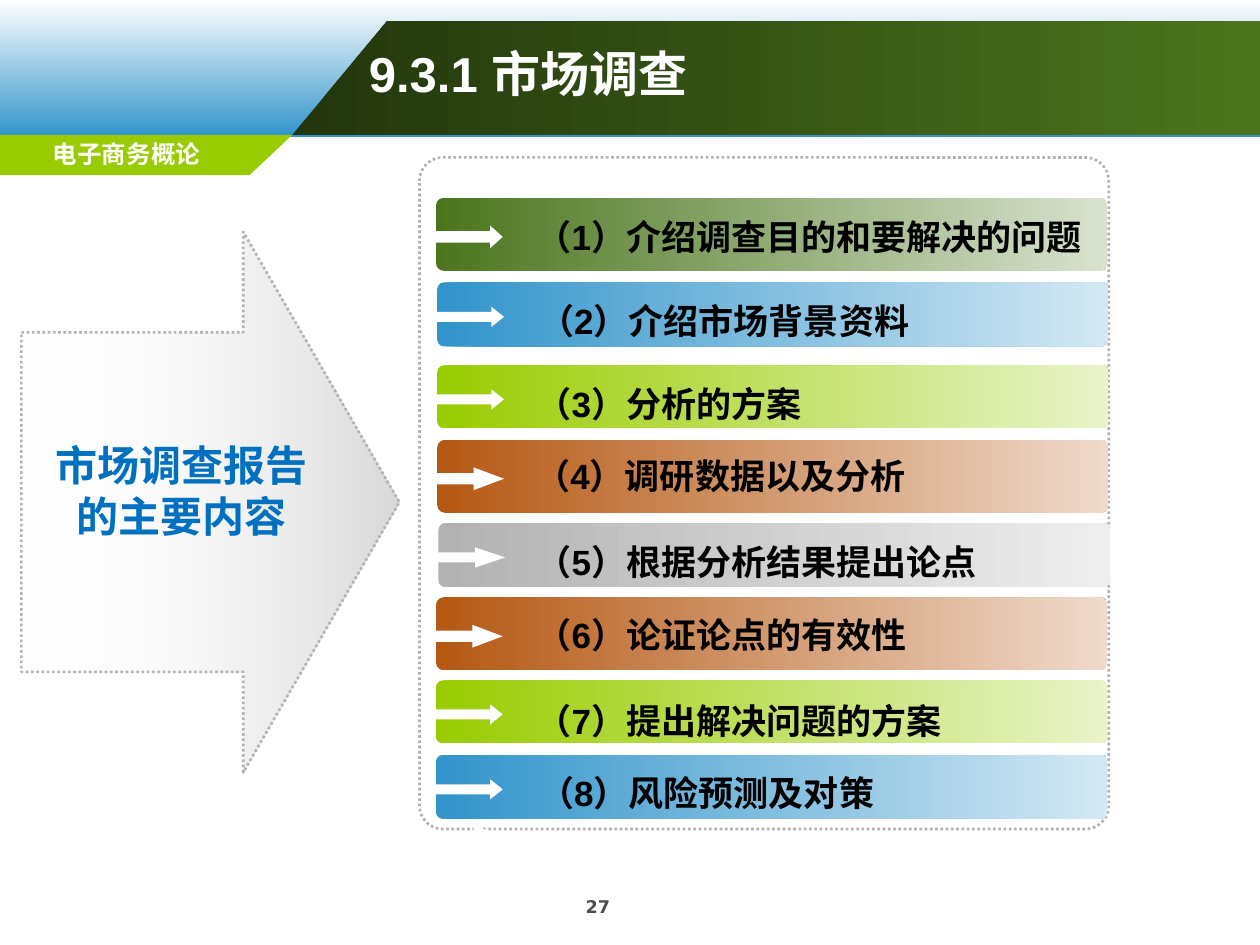
import pptx
import pptx.dml.color
import pptx.enum.dml
import pptx.enum.shapes
import pptx.enum.text
import pptx.oxml.ns
import pptx.util
from lxml import etree

Inches = pptx.util.Inches
Shape = pptx.enum.shapes.MSO_SHAPE
Align = pptx.enum.text.PP_ALIGN
Anchor = pptx.enum.text.MSO_ANCHOR

WHITE, GREY, BLUE, LIME = "FFFFFF", "B2B2B2", "3194CB", "99CC00"
GREEN_FADE = ("4B751D", "D9E2CF")
BLUE_FADE = (BLUE, "D3E8F4")
LIME_FADE = (LIME, "E9F4C9")
BROWN_FADE = ("B55813", "EFDACB")
GREY_FADE = (GREY, "EEEEEE")
SHORT_HEAD, LONG_HEAD = 0.1, 0.24

# text, bar left, bar top, bar height, text left, text top, fade, arrow head
ROWS = [
    ("（1）介绍调查目的和要解决的问题", 3.46, 1.57, 0.58, 4.16, 1.66, GREEN_FADE, SHORT_HEAD),
    ("（2）介绍市场背景资料", 3.47, 2.24, 0.51, 4.18, 2.33, BLUE_FADE, SHORT_HEAD),
    ("（3）分析的方案", 3.47, 2.9, 0.5, 4.16, 2.99, LIME_FADE, SHORT_HEAD),
    ("（4）调研数据以及分析", 3.47, 3.49, 0.58, 4.15, 3.56, BROWN_FADE, LONG_HEAD),
    ("（5）根据分析结果提出论点", 3.48, 4.15, 0.51, 4.16, 4.24, GREY_FADE, LONG_HEAD),
    ("（6）论证论点的有效性", 3.46, 4.74, 0.58, 4.16, 4.82, BROWN_FADE, LONG_HEAD),
    ("（7）提出解决问题的方案", 3.46, 5.4, 0.5, 4.16, 5.5, LIME_FADE, SHORT_HEAD),
    ("（8）风险预测及对策", 3.46, 5.99, 0.51, 4.18, 6.07, BLUE_FADE, SHORT_HEAD),
]


def colour(value):
    return pptx.dml.color.RGBColor.from_string(value)


class SlideBuilder:
    """Holds the shared style and the slide being filled."""

    font = "Arial"

    def __init__(self, slide):
        self.slide = slide

    def paint(self, shape, fill=None, angle=0, alphas=(), dotted=False):
        """Fill is None, one colour, or a pair of gradient colours."""
        shape.shadow.inherit = False
        if fill is None:
            shape.fill.background()
        elif isinstance(fill, str):
            shape.fill.solid()
            shape.fill.fore_color.rgb = colour(fill)
        else:
            shape.fill.gradient()
            shape.fill.gradient_angle = angle
            for stop, value in zip(shape.fill.gradient_stops, fill):
                stop.color.rgb = colour(value)
            nodes = shape.fill._xPr.iter(pptx.oxml.ns.qn("a:srgbClr"))
            for node, alpha in zip(list(nodes), alphas):
                etree.SubElement(node, pptx.oxml.ns.qn("a:alpha"), val=str(alpha * 1000))
        if dotted:
            shape.line.color.rgb = colour(GREY)
            shape.line.width = pptx.util.Pt(1.5)
            shape.line.dash_style = pptx.enum.dml.MSO_LINE.ROUND_DOT
        else:
            shape.line.fill.background()

    def shape(self, preset, area, adjustments=(), parent=None, **style):
        shapes = (parent or self.slide).shapes
        item = shapes.add_shape(preset, *map(Inches, area))
        for index, value in enumerate(adjustments):
            item.adjustments[index] = value
        self.paint(item, **style)

    def outline(self, points, **style):
        corners = [(Inches(x), Inches(y)) for x, y in points]
        builder = self.slide.shapes.build_freeform(*corners[0])
        builder.add_line_segments(corners[1:], close=True)
        self.paint(builder.convert_to_shape(), **style)

    def arrow(self, left, top, height, head, parent=None):
        self.shape(Shape.RIGHT_ARROW, (left, top, 0.58, height),
                   (0.5, head / height), parent, fill=WHITE)

    def text(self, words, area, size, ink, parent=None, font=None,
             align=Align.LEFT, anchor=Anchor.TOP):
        box = (parent or self.slide).shapes.add_textbox(*map(Inches, area))
        frame = box.text_frame
        frame.word_wrap = True
        frame.vertical_anchor = anchor
        para = frame.paragraphs[0]
        para.alignment = align
        span = para.add_run()
        span.text = words
        span.font.color.rgb = colour(ink)
        values = {"name": font or self.font, "size": pptx.util.Pt(size), "bold": True}
        for name, value in values.items():
            setattr(span.font, name, value)

    def row(self, words, left, top, height, text_left, text_top, fade, head):
        group = self.slide.shapes.add_group_shape()
        self.shape(Shape.ROUNDED_RECTANGLE, (left, top, 5.33, height), (0.109,), group, fill=fade)
        arrow_height = 0.18 if height > 0.55 else 0.16
        arrow_top = top + (height - arrow_height) / 2 + 0.02
        self.arrow(left - 0.05, arrow_top, arrow_height, head, group)
        self.text(words, (text_left, text_top, 4.81, 0.44), 20, "000000", group)


def main():
    deck = pptx.Presentation()
    deck.slide_width, deck.slide_height = Inches(10), Inches(7.5)
    page = SlideBuilder(deck.slides.add_slide(deck.slide_layouts[6]))

    # Header bands
    page.shape(Shape.RECTANGLE, (0, 0, 10, 1.09), fill=(WHITE, BLUE), angle=270)
    page.outline([(2.32, 1.07), (10, 1.07), (10, 0.17), (3.07, 0.17)],
                 fill=("23360D", "4B751D"))
    page.outline([(0, 1.07), (2.32, 1.07), (1.98, 1.39), (0, 1.39)], fill=LIME)

    # Course name, page number and title
    page.text("电子商务概论", (0.04, 1.05, 1.93, 0.31), 14, WHITE,
              font="DejaVu Sans", align=Align.CENTER)
    page.text("27", (3.58, 7.06, 2.33, 0.33), 10, "4D4D4D",
              font="DejaVu Sans", align=Align.CENTER)
    page.text("9.3.1 市场调查", (2.83, 0.25, 6.89, 0.66), 28, WHITE, anchor=Anchor.MIDDLE)

    # Large arrow pointing at the report contents
    page.shape(Shape.RIGHT_ARROW, (0.17, 1.84, 3, 4.29), (0.628, 0.413),
               fill=(WHITE, GREY), alphas=(0, 50), dotted=True)
    page.text("市场调查报告的主要内容", (0.25, 3.44, 2.38, 0.91), 24, "0070C0",
              align=Align.CENTER)

    # Dotted panel, with a white arrow over its lower edge
    page.shape(Shape.ROUNDED_RECTANGLE, (3.33, 1.25, 5.47, 5.33), (0.035,), dotted=True)
    page.arrow(3.42, 6.55, 0.18, LONG_HEAD)

    # Report contents
    for row in ROWS:
        page.row(*row)

    deck.save("out.pptx")


if __name__ == "__main__":
    main()
